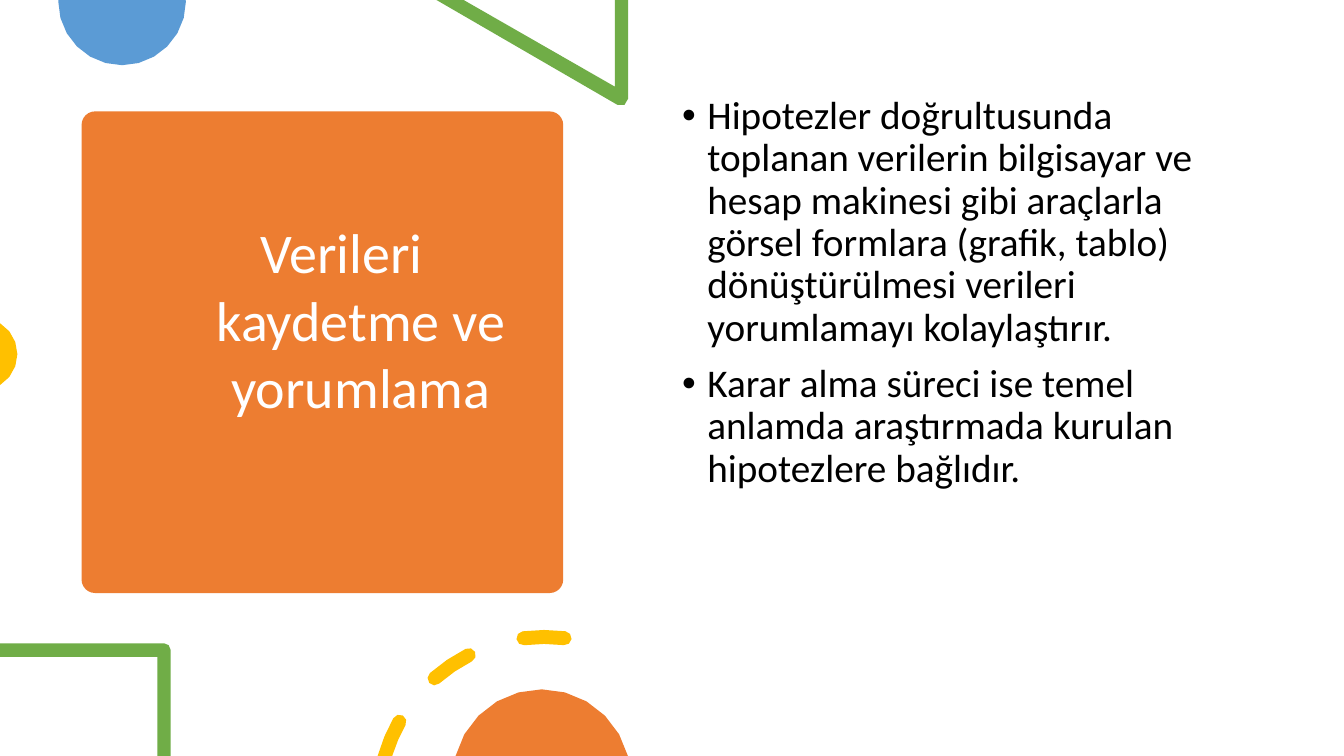
from math import cos, radians, sin

from lxml import etree
from pptx import Presentation
from pptx.dml.color import RGBColor
from pptx.enum.shapes import MSO_SHAPE
from pptx.enum.text import MSO_ANCHOR, PP_ALIGN
from pptx.oxml.ns import qn
from pptx.util import Pt

ROUNDED = MSO_SHAPE.ROUNDED_RECTANGLE
TOP, MIDDLE = MSO_ANCHOR.TOP, MSO_ANCHOR.MIDDLE
LEFT, CENTER = PP_ALIGN.LEFT, PP_ALIGN.CENTER

WIDTH, HEIGHT = 960, 540
COLORS = {
    "orange": "ED7D31",
    "blue": "5B9BD5",
    "green": "70AD47",
    "yellow": "FFC000",
    "white": "FFFFFF",
    "black": "000000",
}
TITLE = "Verileri kaydetme ve yorumlama"
POINTS = [
    "Hipotezler doğrultusunda toplanan verilerin bilgisayar ve hesap makinesi "
    "gibi araçlarla görsel formlara (grafik, tablo) dönüştürülmesi verileri "
    "yorumlamayı kolaylaştırır.",
    "Karar alma süreci ise temel anlamda araştırmada kurulan hipotezlere bağlıdır.",
]


def arc(x, y, radius, start, end, steps):
    """Points along a circle; degrees run clockwise from the right."""
    angles = [radians(start + (end - start) * i / steps) for i in range(steps + 1)]
    return [(x + radius * cos(a), y + radius * sin(a)) for a in angles]


def ring_dash(x, y, radius, half, start, end, inner_start=None):
    """Stroke along a circle with round ends; inner_start cuts the first end flat."""
    def cap(angle, turn):
        center = arc(x, y, radius, angle, angle, 1)[0]
        return arc(*center, half, turn, turn + 180, 4)[1:-1]

    first_cap = [] if inner_start else cap(start, start + 180)
    return (arc(x, y, radius + half, start, end, 2) + cap(end, end)
            + arc(x, y, radius - half, end, inner_start or start, 2) + first_cap)


class SlideMaker:
    font = "Calibri"

    def __init__(self, slide):
        self.slide = slide

    def paint(self, shape, color):
        shape.shadow.inherit = False
        shape.fill.solid()
        shape.fill.fore_color.rgb = RGBColor.from_string(COLORS[color])
        shape.line.fill.background()

    def card(self, x, y, width, height, color, rounding):
        shape = self.slide.shapes.add_shape(
            ROUNDED, Pt(x), Pt(y), Pt(width), Pt(height))
        shape.adjustments[0] = rounding
        self.paint(shape, color)

    def outline(self, color, *contours):
        """One filled shape made of closed contours."""
        contours = [[(Pt(x), Pt(y)) for x, y in points] for points in contours]
        builder = self.slide.shapes.build_freeform(*contours[0][0], scale=1.0)
        for index, points in enumerate(contours):
            if index:
                builder.move_to(*points[0])
            builder.add_line_segments(points[1:], close=True)
        self.paint(builder.convert_to_shape(), color)

    def text(self, x, y, width, height, paragraphs, size, color, align=LEFT,
             anchor=TOP, margin=0, indent=0, bottom=3.6, spacing=1.0, before=0,
             bullet=None):
        box = self.slide.shapes.add_textbox(Pt(x), Pt(y), Pt(width), Pt(height))
        frame = box.text_frame
        frame.word_wrap = True
        frame.vertical_anchor = anchor
        frame.margin_bottom = Pt(bottom)
        for index, words in enumerate(paragraphs):
            para = frame.add_paragraph() if index else frame.paragraphs[0]
            para.alignment = align
            para.line_spacing = spacing
            para.space_before = Pt(before)
            properties = para._p.get_or_add_pPr()
            properties.set("marL", str(Pt(margin)))
            properties.set("indent", str(Pt(indent)))
            if bullet:
                etree.SubElement(properties, qn("a:buFont"), typeface="Arial")
                etree.SubElement(properties, qn("a:buChar"), char=bullet)
            span = para.add_run()
            span.text = words
            span.font.name = self.font
            span.font.size = Pt(size)
            span.font.color.rgb = RGBColor.from_string(COLORS[color])


def main():
    deck = Presentation()
    deck.slide_width, deck.slide_height = Pt(WIDTH), Pt(HEIGHT)
    page = SlideMaker(deck.slides.add_slide(deck.slide_layouts[6]))

    page.card(58.3, 79.6, 344, 344, "orange", 0.028)
    # The deep bottom inset lifts the title one half line above the middle.
    page.text(75.2, 87.6, 310.3, 328.3, [TITLE], 40, "white", align=CENTER,
              anchor=MIDDLE, margin=54.7, indent=-27.4, bottom=51.6)

    page.outline("blue", [(132.6, 0), (41.8, 0)] + arc(87.2, 1, 45.6, 180, 0, 12))
    triangle_tip = arc(443.6, 70.6, 5, 0, 120, 2)
    page.outline("green", [(311.8, 0), (331.2, 0), (439.2, 61.9), (439.2, 0),
                           (448.6, 0)] + triangle_tip)
    page.outline("yellow", arc(-13.5, 253, 25.9, -58.4, 58.4, 6))

    page.text(480.2, 64.8, 414, 385.2, POINTS, 28, "black", margin=18,
              indent=-18, spacing=0.9, before=10, bullet="•")

    frame_corner = arc(117.2, 464.2, 4.7, -90, 0, 2)
    page.outline("green", [(0, 459.5)] + frame_corner + [
        (121.9, HEIGHT), (112.4, HEIGHT), (112.4, 469.2), (0, 469.2)])

    ring = (388.8, 573.8, 118.8, 5)
    spans = [(195.85, 209.4, 197.27), (228.7, 243), (262.8, 277)]
    page.outline("yellow", *[ring_dash(*ring, *span) for span in spans])
    page.outline("orange", arc(387, 556, 63.6, 194.6, 345.4, 10))

    deck.save("out.pptx")


if __name__ == "__main__":
    main()
